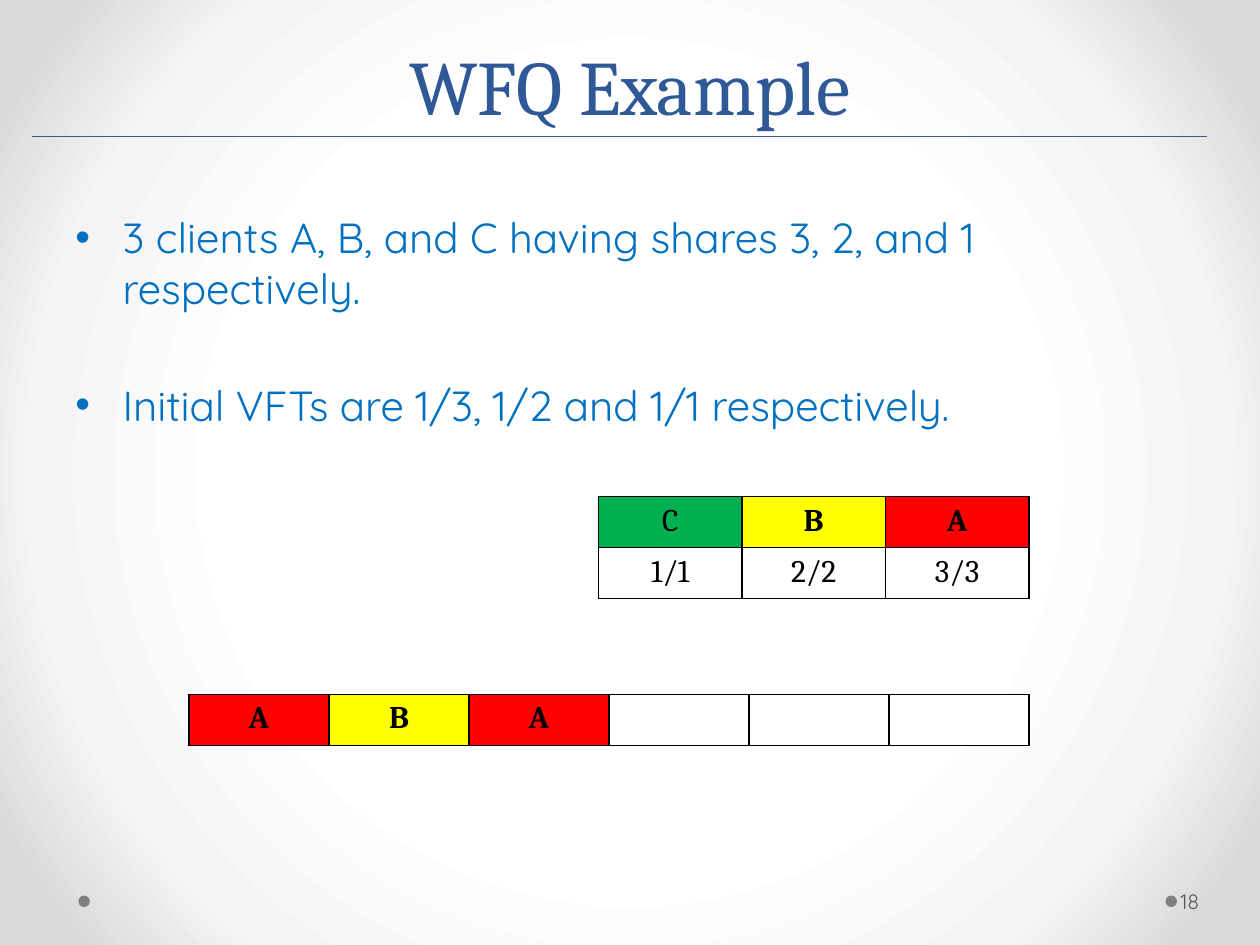
"""Build the WFQ Example slide."""
from pptx import Presentation
from pptx import oxml
from pptx.dml.color import RGBColor
from pptx.enum import shapes as sh, text as tx
from pptx.oxml import ns
from pptx.util import Pt

NS = ns.nsdecls("a")
RED, GOLD, GREEN, WHITE = "FF0000", "FFFF00", "00B050", "FFFFFF"


def write(para, words, size, font, color, bold=False):
    """Add one formatted run to a paragraph."""
    run = para.add_run()
    run.text = words
    run.font.size = Pt(size)
    run.font.name = font
    run.font.bold = bold
    run.font.color.rgb = RGBColor.from_string(color)


prs = Presentation()
prs.slide_width, prs.slide_height = Pt(720), Pt(540)
slide = prs.slides.add_slide(prs.slide_layouts[5])

stops = "".join(
    f'<a:gs pos="{pos}000"><a:srgbClr val="{color}"/></a:gs>'
    for pos, color in [(50, WHITE), (76, "F4F4F4"), (92, "DADADA")]
)
slide.background.fill.solid()
solid = slide.background._cSld.bg.bgPr[0]
solid.getparent().replace(solid, oxml.parse_xml(
    f'<a:gradFill {NS} rotWithShape="1"><a:gsLst>{stops}</a:gsLst>'
    '<a:path path="circle"><a:fillToRect l="50000" t="50000" r="50000" b="50000"/>'
    '</a:path></a:gradFill>'))

for left in (666, 44.75):
    dot = slide.shapes.add_shape(sh.MSO_SHAPE.OVAL, Pt(left), Pt(511.75), Pt(6.6), Pt(6.6))
    dot.shadow.inherit = False
    dot.fill.solid()
    dot.fill.fore_color.rgb = RGBColor.from_string("808080")
    dot.line.fill.background()

title = slide.shapes.title
title.left, title.top, title.width, title.height = Pt(36), Pt(12.25), Pt(648), Pt(66)
frame = title.text_frame
frame.vertical_anchor = tx.MSO_ANCHOR.BOTTOM
para = frame.paragraphs[0]
para.alignment = tx.PP_ALIGN.CENTER
para.line_spacing = Pt(58)
write(para, "WFQ Example", 44, "Cambria", "2F5897")

rule = slide.shapes.add_connector(sh.MSO_CONNECTOR.STRAIGHT, Pt(18), Pt(78), Pt(690), Pt(78))
rule.line.color.rgb = RGBColor.from_string("42568D")
rule.line.width = Pt(0.75)
rule._element.spPr.append(oxml.parse_xml(f"<a:effectLst {NS}/>"))

body = slide.shapes.add_textbox(Pt(36), Pt(117.5), Pt(648), Pt(386.5))
frame = body.text_frame
frame.word_wrap = True
points = [
    "3 clients A, B, and C having shares 3, 2, and 1 respectively.",
    "Initial VFTs are 1/3, 1/2 and 1/1 respectively.",
]
for i, point in enumerate(points):
    para = frame.add_paragraph() if i else frame.paragraphs[0]
    props = para._p.get_or_add_pPr()
    props.set("marL", str(Pt(27)))
    props.set("indent", str(Pt(-27)))
    props.append(oxml.parse_xml(f'<a:buFont {NS} typeface="Arial"/>'))
    props.append(oxml.parse_xml(f'<a:buChar {NS} char="•"/>'))
    para.space_before = Pt(38 * i)
    write(para, point, 24, "Quicksand", "0070C0")

page = slide.shapes.add_textbox(Pt(672.5), Pt(500.5), Pt(44), Pt(28.75))
frame = page.text_frame
frame.word_wrap = True
frame.vertical_anchor = tx.MSO_ANCHOR.MIDDLE
frame.margin_left = Pt(2)
frame.margin_right = Pt(3.6)
write(frame.paragraphs[0], "18", 12, "Quicksand", "595959")

tables = [
    (342, 283.75, 246, [
        [("C", GREEN, False), ("B", GOLD, True), ("A", RED, True)],
        [(share, WHITE, False) for share in ("1/1", "2/2", "3/3")],
    ]),
    (108, 396.75, 480, [
        [("A", RED, True), ("B", GOLD, True), ("A", RED, True)] + [("", WHITE, False)] * 3,
    ]),
]
for left, top, width, rows in tables:
    grid = slide.shapes.add_table(
        len(rows), len(rows[0]), Pt(left), Pt(top), Pt(width), Pt(29.2 * len(rows))).table
    for r, row in enumerate(rows):
        for c, (words, color, bold) in enumerate(row):
            cell = grid.cell(r, c)
            props = cell._tc.get_or_add_tcPr()
            for side in "LRTB":
                props.append(oxml.parse_xml(
                    f'<a:ln{side} {NS} w="{Pt(1)}"><a:solidFill><a:srgbClr val="000000"/>'
                    f'</a:solidFill></a:ln{side}>'))
            cell.fill.solid()
            cell.fill.fore_color.rgb = RGBColor.from_string(color)
            if words:
                para = cell.text_frame.paragraphs[0]
                para.alignment = tx.PP_ALIGN.CENTER
                write(para, words, 18, "Cambria", "000000", bold)

prs.save("out.pptx")
